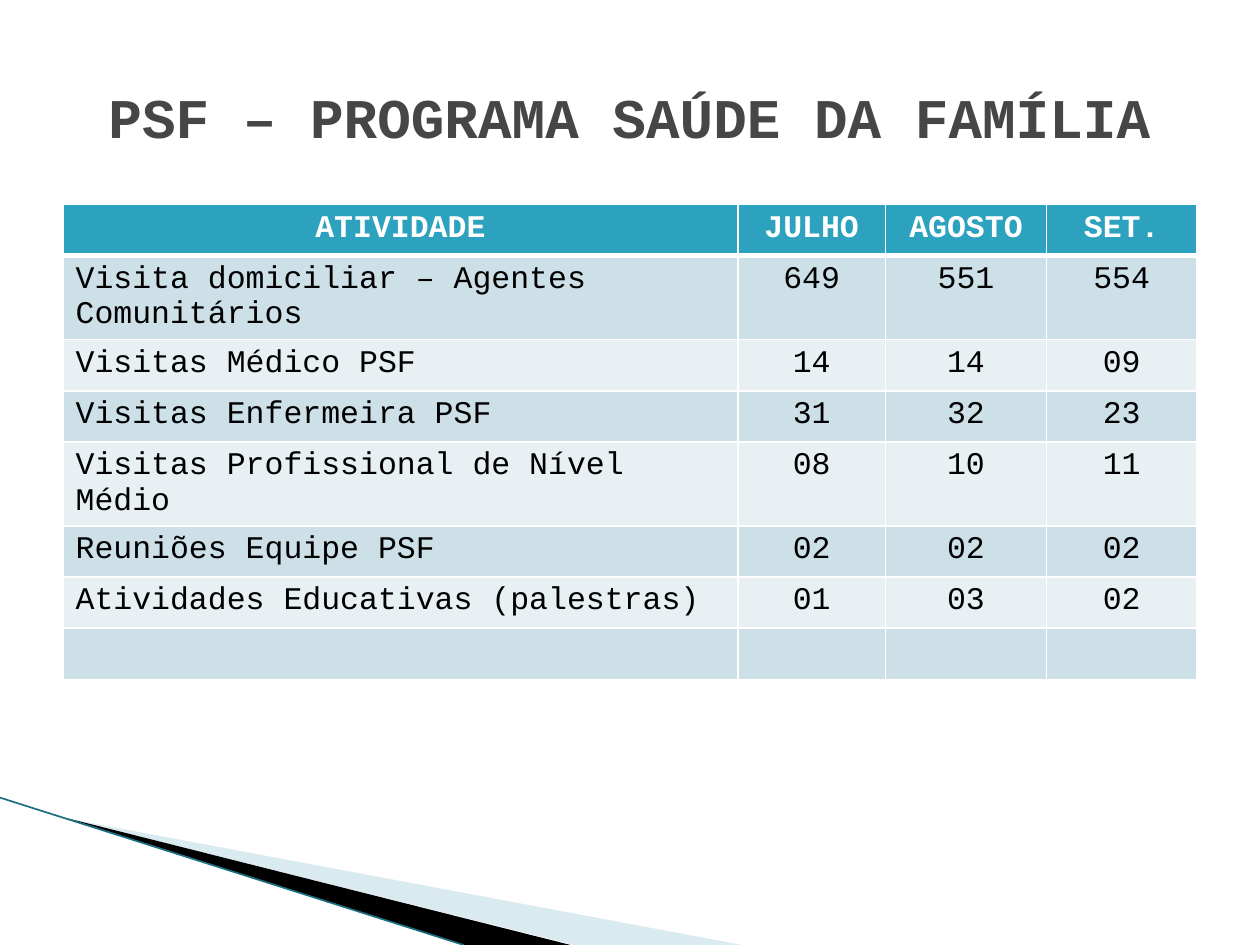
from lxml import etree
from pptx import Presentation
from pptx.dml.color import RGBColor
from pptx.enum.shapes import MSO_CONNECTOR
from pptx.enum.text import MSO_ANCHOR, PP_ALIGN
from pptx.oxml.ns import qn
from pptx.util import Pt

LEFT, CENTER = PP_ALIGN.LEFT, PP_ALIGN.CENTER
MIDDLE = MSO_ANCHOR.MIDDLE
STRAIGHT = MSO_CONNECTOR.STRAIGHT

THEME = {
    "font": "Courier New", "title_size": 32, "table_size": 18,
    "title": "464646", "header": "2DA2BF", "header_text": "FFFFFF",
    "body_text": "000000", "bands": ("CDE0E8", "E8F0F4"), "border": "FFFFFF",
    "pale_wedge": "A0CBDC", "dark_wedge": "000000", "edge": "1B6F82",
}


def style_text(paragraph, text, size, color, bold, align):
    paragraph.alignment = align
    run = paragraph.add_run()
    run.text = text
    formats = {"name": THEME["font"], "size": Pt(size), "bold": bold}
    for attribute, value in formats.items():
        setattr(run.font, attribute, value)
    run.font.color.rgb = RGBColor.from_string(color)


def add_border(cell, side, width):
    line = etree.SubElement(cell._tc.get_or_add_tcPr(), qn(f"a:ln{side}"), w=str(Pt(width)))
    fill = etree.SubElement(line, qn("a:solidFill"))
    etree.SubElement(fill, qn("a:srgbClr"), val=THEME["border"])


prs = Presentation()
prs.slide_width, prs.slide_height = Pt(720), Pt(540)
slide = prs.slides.add_slide(prs.slide_layouts[5])

# Corner wedges: colour, opacity in percent, corners
wedges = [
    (THEME["pale_wedge"], 40, [(39.6, 468), (424, 540), (328, 540)]),
    (THEME["dark_wedge"], 100, [(38, 467.5), (326, 540), (265, 540)]),
]
for color, opacity, corners in wedges:
    points = [(Pt(x), Pt(y)) for x, y in corners]
    builder = slide.shapes.build_freeform(*points[0])
    builder.add_line_segments(points[1:], close=True)
    wedge = builder.convert_to_shape()
    wedge.shadow.inherit = False
    wedge.fill.solid()
    wedge.fill.fore_color.rgb = RGBColor.from_string(color)
    wedge.line.fill.background()
    if opacity < 100:
        color_node = wedge._element.spPr.find(qn("a:solidFill"))[0]
        etree.SubElement(color_node, qn("a:alpha"), val=str(opacity * 1000))

# Edge along the wedges
edge = slide.shapes.add_connector(STRAIGHT, Pt(0), Pt(455.8), Pt(265), Pt(540))
edge.line.color.rgb = RGBColor.from_string(THEME["edge"])
edge.line.width = Pt(0.95)
etree.SubElement(edge._element.spPr, qn("a:effectLst"))

# Title
title = slide.shapes.title
title_box = {"left": Pt(36), "top": Pt(21.6), "width": Pt(648), "height": Pt(90)}
for attribute, value in title_box.items():
    setattr(title, attribute, value)
title.text_frame.vertical_anchor = MIDDLE
style_text(title.text_frame.paragraphs[0], "PSF – PROGRAMA SAÚDE DA FAMÍLIA",
           THEME["title_size"], THEME["title"], True, CENTER)

# Activity table, with an empty closing row
activities = [
    ("ATIVIDADE", "JULHO", "AGOSTO", "SET."),
    ("Visita domiciliar – Agentes Comunitários", "649", "551", "554"),
    ("Visitas Médico PSF", "14", "14", "09"),
    ("Visitas Enfermeira PSF", "31", "32", "23"),
    ("Visitas Profissional de Nível Médio", "08", "10", "11"),
    ("Reuniões Equipe PSF", "02", "02", "02"),
    ("Atividades Educativas (palestras)", "01", "03", "02"),
    ("", "", "", ""),
]
column_widths = [385.6, 84.4, 92, 86]
row_height = 29.2
table = slide.shapes.add_table(
    len(activities), len(column_widths), Pt(36), Pt(116.9),
    Pt(sum(column_widths)), Pt(row_height * len(activities))).table
for column, width in zip(table.columns, column_widths):
    column.width = Pt(width)

for row_index, values in enumerate(activities):
    is_header = row_index == 0
    table.rows[row_index].height = Pt(row_height)
    fill_color = THEME["header"] if is_header else THEME["bands"][(row_index - 1) % 2]
    text_color = THEME["header_text"] if is_header else THEME["body_text"]
    borders = {"L": 1, "R": 1, "T": 3 if row_index == 1 else 1, "B": 3 if is_header else 1}
    for column_index, value in enumerate(values):
        cell = table.cell(row_index, column_index)
        for side, width in borders.items():
            add_border(cell, side, width)
        cell.fill.solid()
        cell.fill.fore_color.rgb = RGBColor.from_string(fill_color)
        if value:
            align = CENTER if is_header or column_index else LEFT
            style_text(cell.text_frame.paragraphs[0], value,
                       THEME["table_size"], text_color, is_header, align)

prs.save("out.pptx")
